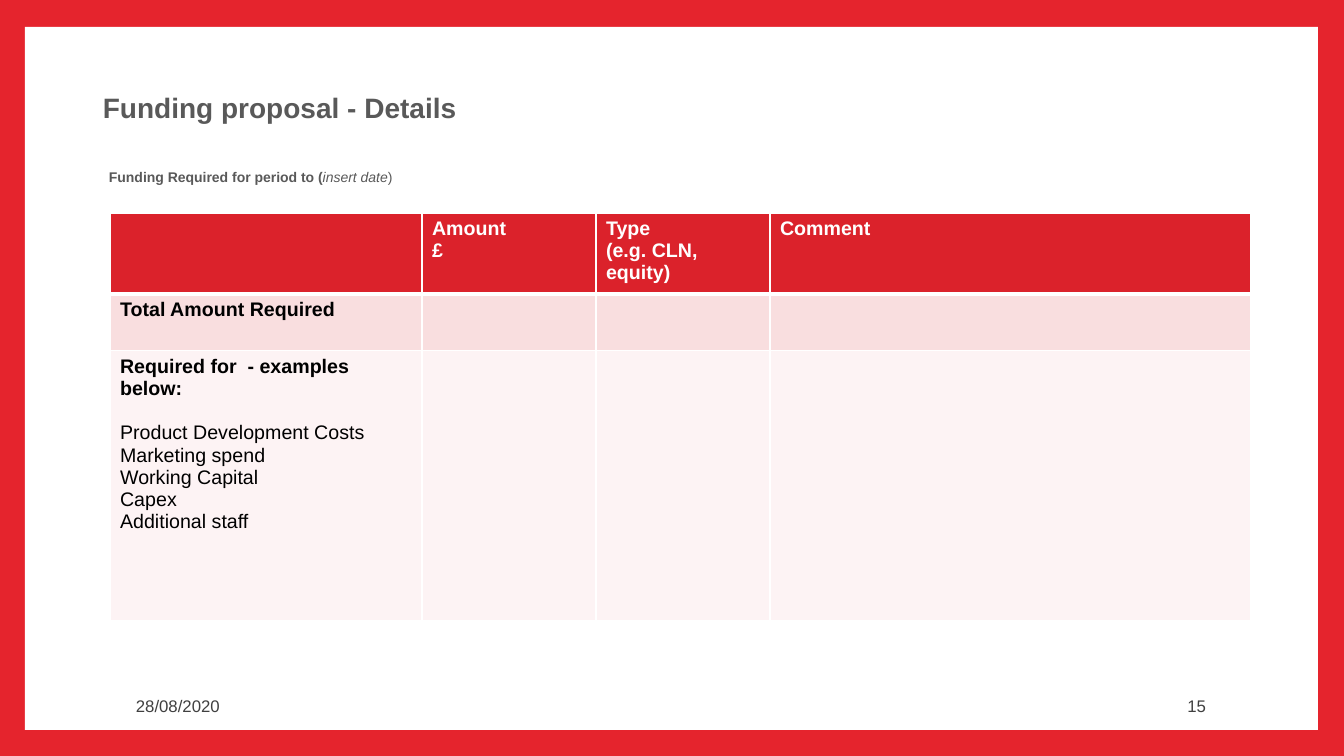
from lxml.etree import SubElement
from pptx import Presentation
from pptx.dml.color import RGBColor
from pptx.enum.shapes import MSO_SHAPE
from pptx.enum.text import MSO_ANCHOR, PP_ALIGN
from pptx.oxml.ns import qn
from pptx.util import Emu, Pt

FRAME_RED = RGBColor(0xE5, 0x24, 0x2D)
TABLE_RED = RGBColor(0xDB, 0x22, 0x2B)
HEADING_GREY = RGBColor(0x59, 0x59, 0x59)
FOOTER_GREY = RGBColor(0x40, 0x40, 0x40)
WHITE = RGBColor(0xFF, 0xFF, 0xFF)
BLACK = RGBColor(0, 0, 0)

COLUMN_WIDTHS = [312, 174, 174, 481]
ROW_HEIGHTS = [77, 57, 270]
ROW_OPACITIES = [100, 15, 5]
HEADINGS = [[], ["Amount", "£"], ["Type", "(e.g. CLN, equity)"], ["Comment"]]
EXAMPLES = ["Product Development Costs", "Marketing spend", "Working Capital",
            "Capex", "Additional staff"]


def px(length):
    return Emu(round(length * 914400 / 100.8))


class SlideBuilder:
    font_name = "Arial"

    def __init__(self, slide):
        self.slide = slide

    def background(self, color):
        fill = self.slide.background.fill
        fill.solid()
        fill.fore_color.rgb = color

    def panel(self, left, top, width, height, color):
        shape = self.slide.shapes.add_shape(
            MSO_SHAPE.RECTANGLE, px(left), px(top), px(width), px(height))
        shape.shadow.inherit = False
        shape.fill.solid()
        shape.fill.fore_color.rgb = color
        shape.line.fill.background()

    def run(self, paragraph, text, size, color, bold=False, italic=False):
        run = paragraph.add_run()
        run.text = text
        font = run.font
        font.name = self.font_name
        font.size = Pt(size)
        font.bold = bold
        font.italic = italic
        font.color.rgb = color

    def text(self, left, top, width, height, anchor=MSO_ANCHOR.MIDDLE,
             align=PP_ALIGN.LEFT, spacing=1.0):
        """Add an empty text box and return its paragraph."""
        box = self.slide.shapes.add_textbox(px(left), px(top), px(width), px(height))
        frame = box.text_frame
        frame.word_wrap = True
        frame.vertical_anchor = anchor
        paragraph = frame.paragraphs[0]
        paragraph.alignment = align
        paragraph.line_spacing = spacing
        return paragraph

    def table(self, left, top, widths, heights):
        table = self.slide.shapes.add_table(
            len(heights), len(widths), px(left), px(top),
            px(sum(widths)), px(sum(heights))).table
        table.horz_banding = False
        for column, width in zip(table.columns, widths):
            column.width = px(width)
        for row, height in zip(table.rows, heights):
            row.height = px(height)
        return table

    def cell_style(self, cell, color, opacity, top_line, bottom_line):
        """Give a cell white borders (widths in points) and a fill of opacity percent."""
        properties = cell._tc.get_or_add_tcPr()
        for side, width in zip("LRTB", (1, 1, top_line, bottom_line)):
            line = SubElement(properties, qn(f"a:ln{side}"), w=str(Pt(width)))
            fill = SubElement(line, qn("a:solidFill"))
            SubElement(fill, qn("a:srgbClr"), val=str(WHITE))
        cell.fill.solid()
        cell.fill.fore_color.rgb = color
        if opacity < 100:
            color_element = properties.find(qn("a:solidFill")).find(qn("a:srgbClr"))
            SubElement(color_element, qn("a:alpha"), val=str(opacity * 1000))

    def cell_text(self, cell, lines, color, bold=True):
        """Append each line to the cell as a paragraph and return the paragraphs."""
        frame = cell.text_frame
        added = []
        for line in lines:
            first = frame.paragraphs[0]
            paragraph = frame.add_paragraph() if first.runs else first
            self.run(paragraph, line, 14, color, bold)
            added.append(paragraph)
        return added


def main():
    presentation = Presentation()
    presentation.slide_width = px(1344)
    presentation.slide_height = px(756)
    builder = SlideBuilder(presentation.slides.add_slide(presentation.slide_layouts[6]))

    builder.background(FRAME_RED)
    builder.panel(25, 27, 1293, 703, WHITE)

    period = builder.text(99, 165, 1159, 518, MSO_ANCHOR.TOP, spacing=0.9)
    builder.run(period, "Funding Required for period to (", 10, HEADING_GREY, bold=True)
    builder.run(period, "insert date", 10, HEADING_GREY, italic=True)
    builder.run(period, ")", 10, HEADING_GREY)

    date = builder.text(126, 686, 257, 40)
    builder.run(date, "28/08/2020", 12, FOOTER_GREY)
    page_number = builder.text(1028, 686, 188, 40, align=PP_ALIGN.RIGHT)
    builder.run(page_number, "15", 12, FOOTER_GREY)

    table = builder.table(110, 213, COLUMN_WIDTHS, ROW_HEIGHTS)
    for row_index, opacity in enumerate(ROW_OPACITIES):
        top_line = 3 if row_index == 1 else 1
        bottom_line = 3 if row_index == 0 else 1
        for cell in table.rows[row_index].cells:
            builder.cell_style(cell, TABLE_RED, opacity, top_line, bottom_line)
    for cell, lines in zip(table.rows[0].cells, HEADINGS):
        builder.cell_text(cell, lines, WHITE)
    builder.cell_text(table.cell(1, 0), ["Total Amount Required"], BLACK)
    needs = table.cell(2, 0)
    builder.cell_text(needs, ["Required for  - examples below:"], BLACK)
    examples = builder.cell_text(needs, EXAMPLES, BLACK, bold=False)
    examples[0].space_before = Pt(16)

    title = builder.text(93, 67, 1089, 84, spacing=0.9)
    builder.run(title, "Funding proposal - Details", 20, HEADING_GREY, bold=True)

    presentation.save("out.pptx")


if __name__ == "__main__":
    main()
